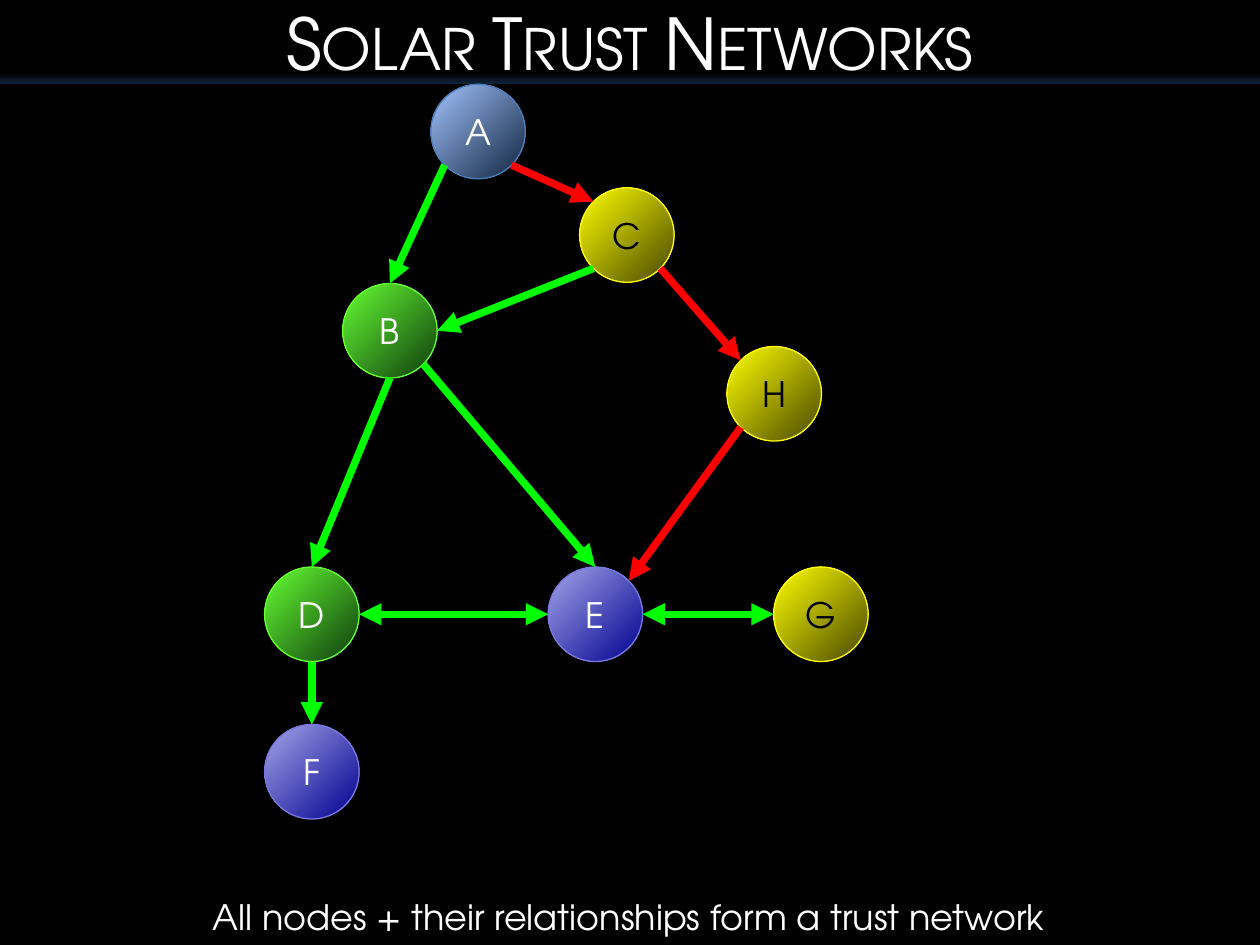
from math import sqrt
from pptx import Presentation
from pptx.dml.color import RGBColor as Rgb
from pptx.enum.shapes import MSO_CONNECTOR as Link, MSO_SHAPE as Kind
from pptx.enum.text import MSO_ANCHOR as Anchor, PP_ALIGN as Align
from pptx.oxml.ns import qn
from pptx.util import Pt
from lxml.etree import SubElement as Sub

FONT = "TeX Gyre Adventor"
WHITE, BLACK = "FFFFFF", "000000"
GO, STOP = "00FF00", "FF0000"
SIZE = 54
DIAG = 1 / sqrt(2)
SIDES = {
    "top": (0, -1), "bottom": (0, 1), "left": (-1, 0), "right": (1, 0),
    "nw": (-DIAG, -DIAG), "ne": (DIAG, -DIAG),
    "sw": (-DIAG, DIAG), "se": (DIAG, DIAG),
}
STYLES = {
    "blue": ("0F243E", "A4C4FF", "4B7EBC", WHITE),
    "green": ("0E3C0D", "66FF33", "66FF33", WHITE),
    "yellow": ("484800", "FFFF00", "FFFF00", BLACK),
    "violet": ("000090", "A5A5E9", "7878DE", WHITE),
}
NODES = {
    "A": (246.2, 48.2, "blue"),
    "B": (195.8, 162, "green"),
    "C": (331.2, 107.3, "yellow"),
    "D": (151.2, 324, "green"),
    "E": (313.2, 324, "violet"),
    "F": (151.2, 414, "violet"),
    "G": (442.1, 324, "yellow"),
    "H": (415.4, 198, "yellow"),
}
EDGES = [
    ("D", "bottom", "F", "top", GO, False),
    ("B", "bottom", "D", "top", GO, False),
    ("A", "sw", "B", "top", GO, False),
    ("B", "se", "E", "top", GO, False),
    ("H", "sw", "E", "ne", STOP, False),
    ("E", "left", "D", "right", GO, True),
    ("A", "se", "C", "nw", STOP, False),
    ("E", "right", "G", "left", GO, True),
    ("C", "se", "H", "nw", STOP, False),
    ("C", "sw", "B", "right", GO, False),
]


def color(code):
    return Rgb.from_string(code)


def write(shape, text, size, code, anchor=Anchor.MIDDLE):
    frame = shape.text_frame
    frame.word_wrap = True
    frame.vertical_anchor = anchor
    para = frame.paragraphs[0]
    para.alignment = Align.CENTER
    run = para.add_run()
    run.text = text
    run.font.name = FONT
    run.font.size = Pt(size)
    run.font.color.rgb = color(code)
    return run


def blend(shape, stops):
    shape.fill.gradient()
    for stop, (place, code) in zip(shape.fill.gradient_stops, stops):
        stop.position = place
        stop.color.rgb = color(code)


def add_title(slide, x, y, w, h):
    bar = slide.shapes.add_shape(Kind.RECTANGLE, Pt(x), Pt(y), Pt(w), Pt(h))
    bar.shadow.inherit = False
    bar.line.fill.background()
    blend(bar, [(0.87, BLACK), (1, "0F243E")])
    bar.fill.gradient_angle = 270
    run = write(bar, "Solar Trust Networks", 40.8, WHITE)
    run.font._element.set("cap", "small")


def add_node(slide, name, x, y, style):
    dark, light, edge, ink = STYLES[style]
    node = slide.shapes.add_shape(Kind.OVAL, Pt(x), Pt(y), Pt(SIZE), Pt(SIZE))
    node.shadow.inherit = False
    blend(node, [(0, dark), (1, light)])
    grad = node._element.spPr.find(qn("a:gradFill"))
    grad.remove(grad.find(qn("a:lin")))
    focus = Sub(grad, qn("a:path"), {"path": "circle"})
    Sub(focus, qn("a:fillToRect"), {"l": "100000", "t": "100000"})
    node.line.color.rgb = color(edge)
    node.line.width = Pt(0.75)
    write(node, name, 20, ink)


def rim(name, side):
    x, y, _ = NODES[name]
    half = SIZE / 2
    dx, dy = SIDES[side]
    return Pt(x + half + half * dx), Pt(y + half + half * dy)


def add_edge(slide, start, leave, end, enter, code, both):
    edge = slide.shapes.add_connector(
        Link.STRAIGHT, *rim(start, leave), *rim(end, enter))
    edge.line.color.rgb = color(code)
    edge.line.width = Pt(4.25)
    line = edge.line._get_or_add_ln()
    for tag in ["a:headEnd", "a:tailEnd"] if both else ["a:tailEnd"]:
        Sub(line, qn(tag), {"type": "triangle"})
    Sub(edge._element.spPr, qn("a:effectLst"))


def add_graph(slide):
    for name, (x, y, style) in NODES.items():
        add_node(slide, name, x, y, style)
    for edge in EDGES:
        add_edge(slide, *edge)


def add_note(slide, x, y, w, h):
    note = slide.shapes.add_textbox(Pt(x), Pt(y), Pt(w), Pt(h))
    write(note, "All nodes + their relationships form a trust network",
          20, WHITE, Anchor.TOP)


def main():
    deck = Presentation()
    deck.slide_width, deck.slide_height = Pt(720), Pt(540)
    slide = deck.slides.add_slide(deck.slide_layouts[6])
    slide.background.fill.solid()
    slide.background.fill.fore_color.rgb = color(BLACK)
    add_title(slide, 0, 0, 720, 48)
    add_graph(slide)
    add_note(slide, -0.7, 508.3, 720, 31.5)
    deck.save("out.pptx")


if __name__ == "__main__":
    main()
